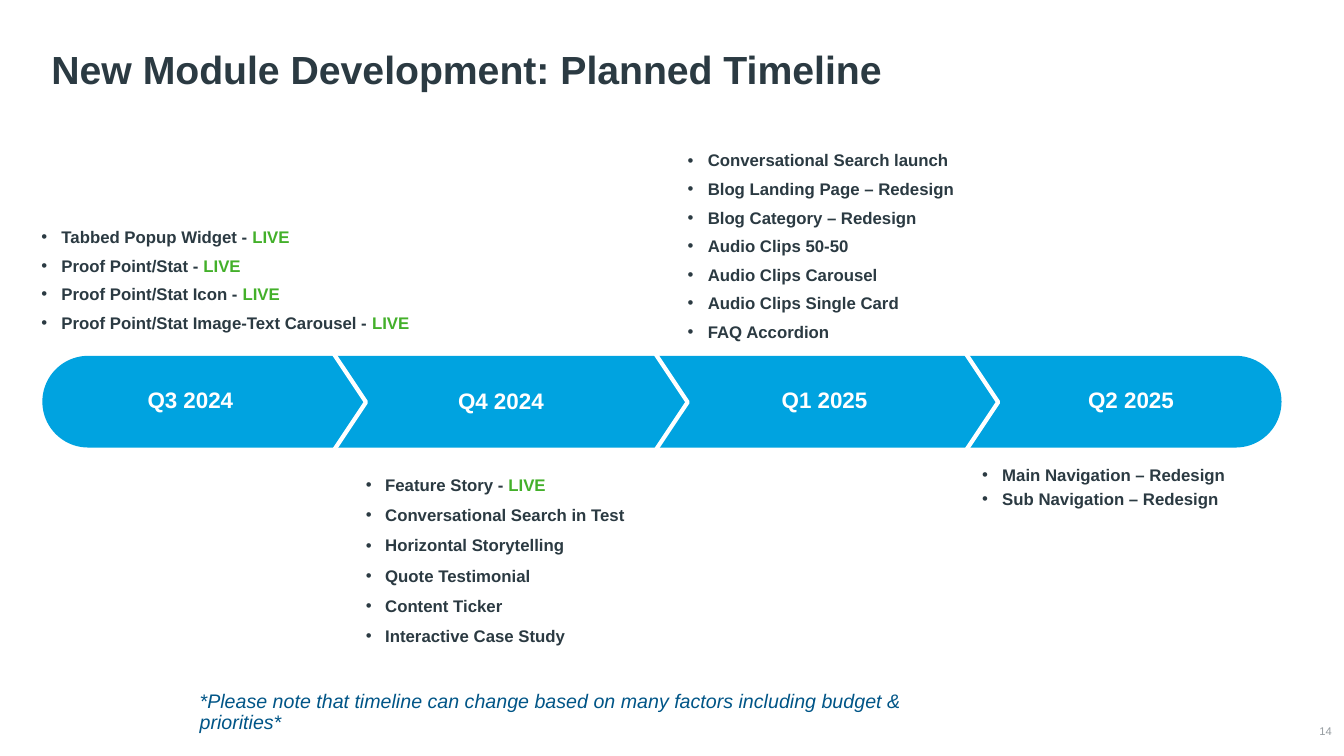
from lxml.etree import SubElement
from pptx import Presentation
from pptx.dml.color import RGBColor
from pptx.enum.shapes import MSO_SHAPE
from pptx.enum.text import MSO_ANCHOR, MSO_AUTO_SIZE, PP_ALIGN
from pptx.oxml.ns import qn
from pptx.util import Inches, Pt

DARK, WHITE, BLUE, NAVY, GREEN, GREY = (
    "2B3A42", "FFFFFF", "00A3E0", "005587", "43B02A", "959CA0")


def style(font, size, color, bold=False, italic=False):
    font.name = "Arial"
    font.size = Pt(size)
    font.bold = bold
    font.italic = italic
    font.color.rgb = RGBColor.from_string(color)


def prepare_frame(shape, anchor, inset=0):
    """Wrap the text, fix the box size and set anchor and side insets."""
    frame = shape.text_frame
    frame.word_wrap = True
    frame.auto_size = MSO_AUTO_SIZE.NONE
    frame.vertical_anchor = anchor
    frame.margin_left = frame.margin_right = Inches(inset)
    frame.margin_top = frame.margin_bottom = Inches(inset / 2)
    return frame


prs = Presentation()
prs.slide_width, prs.slide_height = Inches(13.33), Inches(7.5)
slide = prs.slides.add_slide(prs.slide_layouts[1])
shapes = slide.shapes

# Title and footnote
title, note = slide.placeholders
for holder, box, anchor, text, look in [
    (title, (0.41, 0.13, 12.4, 0.84), MSO_ANCHOR.BOTTOM,
     "New Module Development: Planned Timeline", (28, DARK, True)),
    (note, (1.88, 6.81, 8.02, 0.44), MSO_ANCHOR.TOP,
     "*Please note that timeline can change based on many factors "
     "including budget & priorities*", (14, NAVY, False, True)),
]:
    holder.left, holder.top, holder.width, holder.height = map(Inches, box)
    paragraph = prepare_frame(holder, anchor, 0.1).paragraphs[0]
    paragraph.text = text
    paragraph.alignment = PP_ALIGN.LEFT
    paragraph.line_spacing = 0.9
    paragraph.space_before = Pt(0)
    properties = paragraph._p.get_or_add_pPr()
    properties.set("marL", "0")
    properties.set("indent", "0")
    SubElement(properties, qn("a:buNone"))
    style(paragraph.font, *look)

# Timeline bar with quarter labels and chevron dividers
bar = shapes.add_shape(MSO_SHAPE.ROUNDED_RECTANGLE, Inches(0.42), Inches(3.53),
                       Inches(12.29), Inches(0.91))
bar.adjustments[0] = 0.5
bar.shadow.inherit = False
bar.fill.solid()
bar.fill.fore_color.rgb = RGBColor.from_string(BLUE)
bar.line.fill.background()

for quarter, left, top, width in [
    ("Q3 2024", 1.33, 3.51, 2.55),
    ("Q4 2024", 4.41, 3.52, 1.62),
    ("Q1 2025", 7.62, 3.51, 1.6),
    ("Q2 2025", 10.66, 3.51, 1.6),
]:
    label = shapes.add_shape(MSO_SHAPE.ROUNDED_RECTANGLE, Inches(left), Inches(top),
                             Inches(width), Inches(0.91))
    label.adjustments[0] = 0.5
    label.shadow.inherit = False
    label.fill.background()
    label.line.fill.background()
    paragraph = prepare_frame(label, MSO_ANCHOR.MIDDLE).paragraphs[0]
    paragraph.text = quarter
    paragraph.alignment = PP_ALIGN.LEFT
    style(paragraph.font, 16, WHITE, bold=True)

for left in (3.31, 6.5, 9.58):
    outline = shapes.build_freeform(Inches(left), Inches(3.51))
    outline.add_line_segments([(Inches(left + 0.32), Inches(3.99)),
                               (Inches(left), Inches(4.47))], close=False)
    divider = outline.convert_to_shape()
    divider.shadow.inherit = False
    divider.fill.background()
    divider.line.color.rgb = RGBColor.from_string(WHITE)
    divider.line.width = Pt(3)

# Modules per quarter: box, indent, line spacing, space after, items
LIVE = "LIVE"
module_lists = [
    ((0.41, 2.25, 3.76, 1.26), 0.2, 1.0, 6, [
        "Tabbed Popup Widget - LIVE", "Proof Point/Stat - LIVE",
        "Proof Point/Stat Icon - LIVE",
        "Proof Point/Stat Image-Text Carousel - LIVE"]),
    ((3.63, 4.61, 2.65, 1.74), 0.19, 1.5, 0, [
        "Feature Story - LIVE", "Conversational Search in Test",
        "Horizontal Storytelling", "Quote Testimonial", "Content Ticker",
        "Interactive Case Study"]),
    ((6.82, 1.49, 2.86, 1.69), 0.2, 1.0, 6, [
        "Conversational Search launch", "Blog Landing Page – Redesign",
        "Blog Category – Redesign", "Audio Clips 50-50", "Audio Clips Carousel",
        "Audio Clips Single Card", "FAQ Accordion"]),
    ((9.74, 4.61, 2.65, 1.05), 0.2, 1.0, 3, [
        "Main Navigation – Redesign", "Sub Navigation – Redesign"]),
]
for box, indent, line_spacing, space_after, modules in module_lists:
    frame = prepare_frame(shapes.add_textbox(*map(Inches, box)), MSO_ANCHOR.TOP)
    for index, module in enumerate(modules):
        paragraph = frame.add_paragraph() if index else frame.paragraphs[0]
        properties = paragraph._p.get_or_add_pPr()
        properties.set("marL", str(Inches(indent)))
        properties.set("indent", str(-Inches(indent)))
        SubElement(properties, qn("a:buFont"), typeface="Arial")
        SubElement(properties, qn("a:buChar"), char="•")
        paragraph.line_spacing = line_spacing
        paragraph.space_after = Pt(space_after)
        style(paragraph.font, 12, DARK, bold=True)
        paragraph.add_run().text = module.removesuffix(LIVE)
        if module.endswith(LIVE):
            status = paragraph.add_run()
            status.text = LIVE
            status.font.color.rgb = RGBColor.from_string(GREEN)

# Page number
page_number = shapes.add_textbox(Inches(12.82), Inches(7.16), Inches(0.39), Inches(0.19))
paragraph = prepare_frame(page_number, MSO_ANCHOR.MIDDLE).paragraphs[0]
paragraph.text = "14"
paragraph.alignment = PP_ALIGN.RIGHT
style(paragraph.font, 8, GREY)

prs.save("out.pptx")
